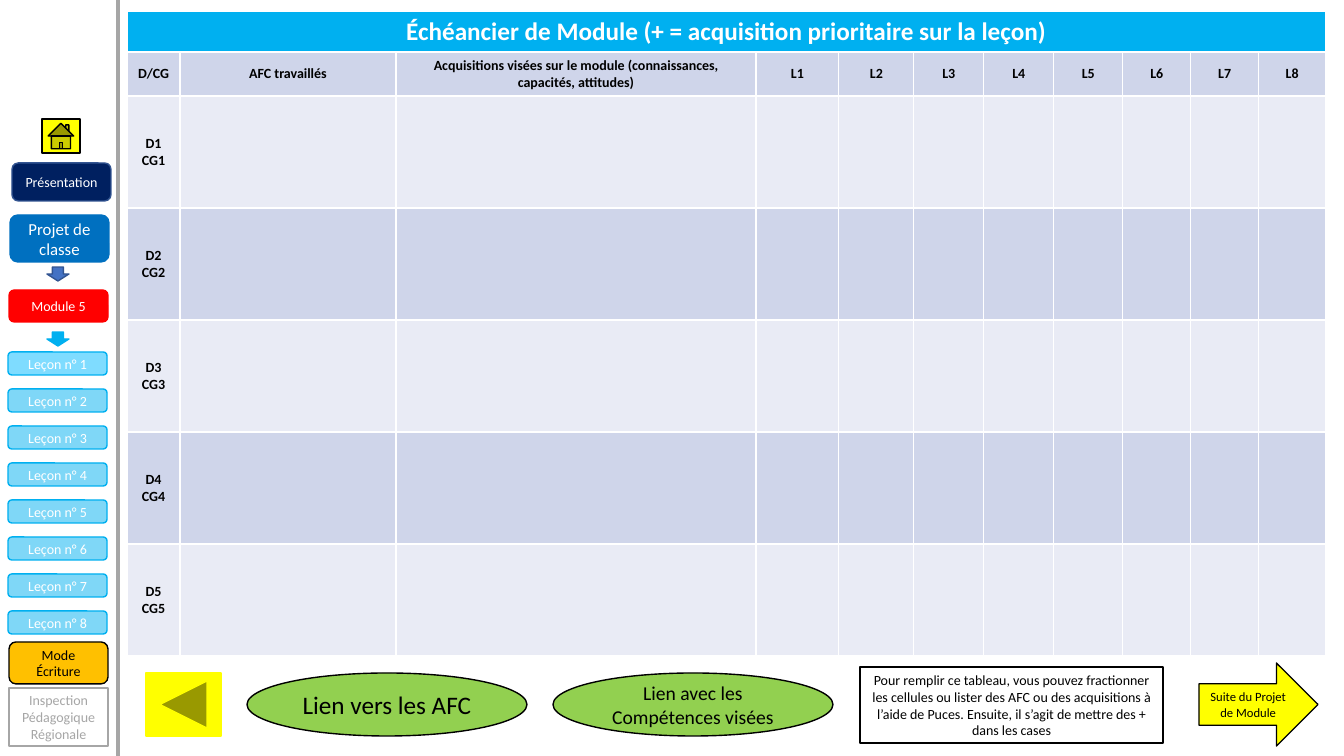
from lxml import etree
from pptx import Presentation
from pptx import util as u
from pptx.dml.color import RGBColor
from pptx.enum import shapes, text
from pptx.oxml.ns import qn

PX = 914400 / 100.8
FORM = shapes.MSO_SHAPE
WHITE, BLACK, YELLOW, SKY = "FFFFFF", "000000", "FFFF00", "00B0F0"


def px(*lengths):
    return [u.Emu(round(n * PX)) for n in lengths]


def write(holder, wording, size, color, bold=False):
    """Centre the wording in a shape's text frame or a table cell."""
    frame = getattr(holder, "text_frame", holder)
    frame.text = wording
    holder.vertical_anchor = frame.vertical_anchor = text.MSO_ANCHOR.MIDDLE
    for paragraph in frame.paragraphs:
        paragraph.alignment = text.PP_ALIGN.CENTER
        font = paragraph.font
        font.name, font.size, font.bold = "Calibri", u.Pt(size), bold
        font.color.rgb = RGBColor.from_string(color)


deck = Presentation()
deck.slide_width, deck.slide_height = px(1344, 756)
slide = deck.slides.add_slide(deck.slide_layouts[6])

divider = slide.shapes.add_connector(
    shapes.MSO_CONNECTOR.STRAIGHT, *px(118, 0, 118, 756))
divider.line.color.rgb = RGBColor.from_string("A6A6A6")
divider.line.width = u.Pt(3)
etree.SubElement(divider._element.spPr, qn("a:effectLst"))

# Schedule table
column_widths = [53, 216, 360, 83, 75, 70, 70, 69, 68, 68, 67]
row_heights = [41, 44] + [112] * 5
schedule = slide.shapes.add_table(
    len(row_heights), len(column_widths),
    *px(127, 11, sum(column_widths), sum(row_heights))).table
for column, width in zip(schedule.columns, px(*column_widths)):
    column.width = width
for row, height in zip(schedule.rows, px(*row_heights)):
    row.height = height
for r, row in enumerate(schedule.rows):
    band = SKY if r == 0 else "CFD5EA" if r % 2 else "E9EBF5"
    for cell in row.cells:
        cell.fill.solid()
        cell.fill.fore_color.rgb = RGBColor.from_string(band)

heading = schedule.cell(0, 0)
heading.merge(schedule.cell(0, len(column_widths) - 1))
write(heading, "Échéancier de Module (+ = acquisition prioritaire sur la leçon)",
      18, WHITE, True)
column_titles = [
    "D/CG", "AFC travaillés",
    "Acquisitions visées sur le module (connaissances, capacités, attitudes)",
] + [f"L{n}" for n in range(1, 9)]
for c, title in enumerate(column_titles):
    write(schedule.cell(1, c), title, 10, BLACK, True)
for n in range(1, 6):
    write(schedule.cell(n + 1, 0), f"D{n}\nCG{n}", 10, BLACK, True)

# Side menu and bottom bar: form, box, fill, line, wording, size, text colour
buttons = [
    (FORM.RECTANGLE, (9, 688, 99, 58), WHITE, "A6A6A6",
     "Inspection Pédagogique Régionale", 10, "A6A6A6"),
    (FORM.ACTION_BUTTON_HOME, (42, 119, 38, 34), YELLOW, BLACK, "", 10, BLACK),
    (FORM.ROUNDED_RECTANGLE, (12, 163, 99, 38), "002060", "325491",
     "Présentation", 10, WHITE),
    (FORM.ROUNDED_RECTANGLE, (10, 215, 99, 47), "0070C0", "0070C0",
     "Projet de classe", 12, WHITE),
    (FORM.DOWN_ARROW, (47, 267, 22, 14), "4472C4", "325491", "", 10, WHITE),
    (FORM.ROUNDED_RECTANGLE, (9, 290, 99, 32), "FF0000", "FF0000",
     "Module 5", 10, WHITE),
    (FORM.DOWN_ARROW, (47, 332, 22, 14), SKY, SKY, "", 10, WHITE),
    (FORM.ROUNDED_RECTANGLE, (9, 642, 99, 42), "FFC000", BLACK,
     "Mode Écriture", 10, BLACK),
    (FORM.ACTION_BUTTON_BACK_OR_PREVIOUS, (146, 673, 75, 63), YELLOW, YELLOW,
     "", 10, BLACK),
    (FORM.OVAL, (247, 673, 280, 63), "92D050", BLACK, "Lien vers les AFC", 18, BLACK),
    (FORM.OVAL, (553, 673, 280, 63), "92D050", BLACK,
     "Lien avec les Compétences visées", 14, BLACK),
    (FORM.RIGHT_ARROW, (1199, 663, 119, 83), YELLOW, BLACK,
     "Suite du Projet de Module", 9, BLACK),
    (FORM.RECTANGLE, (860, 667, 303, 76), WHITE, BLACK,
     "Pour remplir ce tableau, vous pouvez fractionner les cellules ou lister "
     "des AFC ou des acquisitions à l’aide de Puces. Ensuite, il s’agit de "
     "mettre des + dans les cases", 10, BLACK),
]
lessons = [
    (FORM.ROUNDED_RECTANGLE, (8, 352 + 37 * i, 99, 23), "00BAFF" if i == 0 else SKY,
     SKY, f"Leçon n° {i + 1}", 10, WHITE)
    for i in range(8)
]
for button in buttons + lessons:
    form, box, fill, outline, wording, size, color = button
    shape = slide.shapes.add_shape(form, *px(*box))
    shape.shadow.inherit = False
    shape.fill.solid()
    shape.fill.fore_color.rgb = RGBColor.from_string(fill)
    shape.line.color.rgb = RGBColor.from_string(outline)
    shape.line.width = u.Pt(1)
    if wording:
        shape.text_frame.word_wrap = True
        write(shape.text_frame, wording, size, color)
    if button in lessons:
        tint = shape._element.spPr.find(qn("a:solidFill"))[0]
        etree.SubElement(tint, qn("a:alpha"), val="50000")

deck.save("out.pptx")
